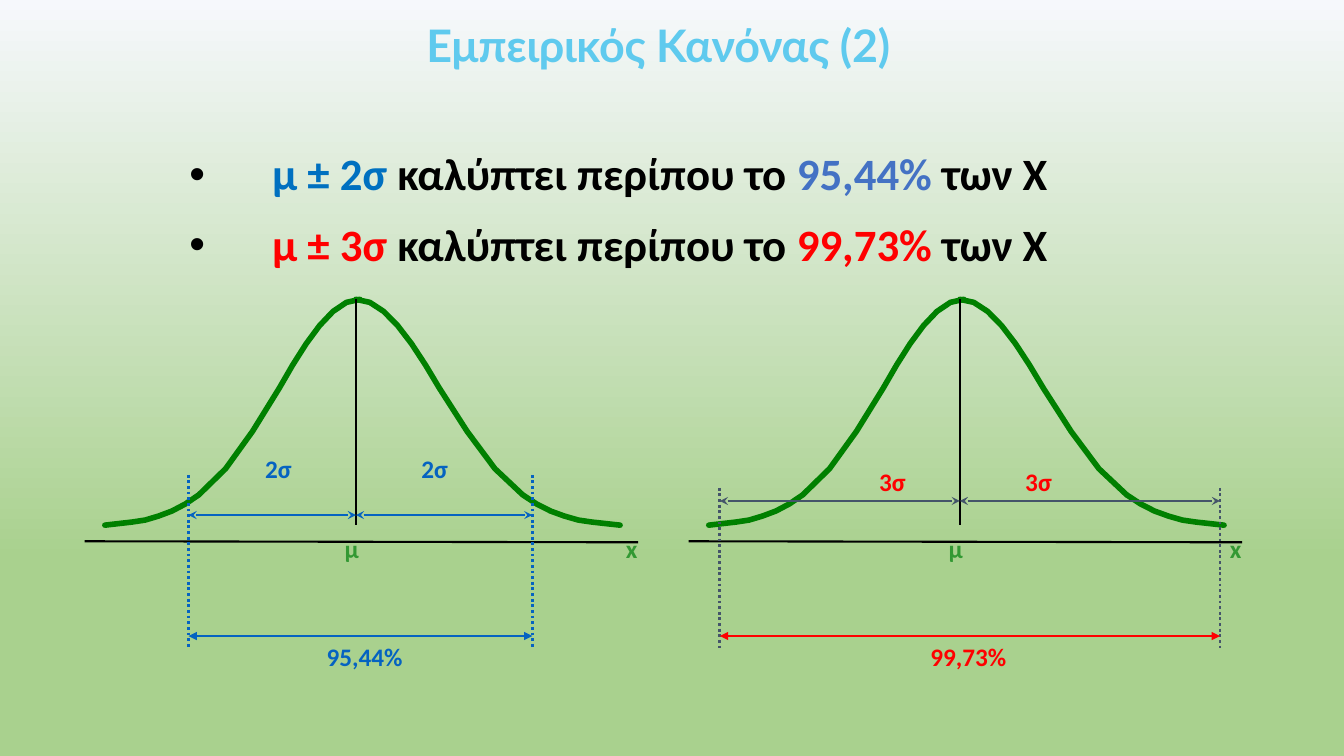
from dataclasses import dataclass
from lxml.etree import SubElement as Sub
from pptx import Presentation as Deck
from pptx.dml.color import RGBColor as Color
from pptx.enum.dml import MSO_LINE as Dash
from pptx.enum.shapes import MSO_CONNECTOR as Link
from pptx.enum.text import MSO_ANCHOR as Anchor, PP_ALIGN as Align
from pptx.oxml.ns import qn
from pptx.util import Emu, Inches, Pt

COLS, ROWS = 13.33, 7.5
WIDE, TALL = Inches(COLS), Inches(ROWS)
BLACK, RED, BLUE, SLATE = "000000", "FF0000", "0563C1", "44546A"
GREEN, LEAF = "008000", "339933"
BODY = {"name": "Calibri", "size": Pt(32), "bold": True}
HEAD = BODY | {"name": "Lato"}
NOTE = BODY | {"size": Pt(18)}
STEPS = (0, 2, 3, 4, 5, 6, 7, 9, 11, 13, 14, 15, 16, 17, 18, 19)
CURVE = (5.21, 5.18, 5.16, 5.12, 5.07, 5, 4.91, 4.65,
         4.28, 3.85, 3.62, 3.41, 3.23, 3.09, 3, 2.97)
MEAN, PITCH = 3.53, 5.99


@dataclass
class Panel:
    """One bell curve with its marked range, in columns and rows."""
    shift: float
    left: float
    right: float
    top: float
    row: float
    sigma: str
    share: str
    tint: str
    guide: str
    marks: tuple[float, float]


@dataclass
class Rule:
    """One bulleted statement of the rule."""
    range: str
    share: str
    tint: str
    accent: str


PANELS = (
    Panel(0, 1.87, 5.28, 4.71, 5.11, "2σ", "95,44%", BLUE, BLUE, (2.47, 4.02)),
    Panel(PITCH, 7.14, 12.1, 4.84, 4.97, "3σ", "99,73%", RED, SLATE, (8.56, 10.01)),
)
RULES = (
    Rule("μ ± 2σ ", "95,44% ", "0070C0", "4472C4"),
    Rule("μ ± 3σ ", "99,73% ", RED, RED),
)


def hue(code: str) -> Color:
    """Turn a hex string into a colour."""
    return Color.from_string(code)


def col(num: float) -> Emu:
    """Measure columns across the slide."""
    return Emu(round(WIDE * num / COLS))


def row(num: float) -> Emu:
    """Measure rows down the slide."""
    return Emu(round(TALL * num / ROWS))


def paint(item: object, look: dict) -> None:
    """Set each format value on an object."""
    for key, val in look.items():
        setattr(item, key, val)


def write(para: object, text: str, tint: str, look: dict) -> None:
    """Add a coloured run to a paragraph."""
    run = para.add_run()
    run.text = text
    paint(run.font, look)
    run.font.color.rgb = hue(tint)


def frame(slide: object, x: float, y: float, w: float, h: float) -> object:
    """Add a wrapping text box."""
    box = slide.shapes.add_textbox(col(x), row(y), col(w), row(h))
    box.text_frame.word_wrap = True
    return box


def label(slide: object, x: float, y: float, w: float, text: str,
          tint: str, align: Align = Align.CENTER) -> None:
    """Place a small bold label."""
    para = frame(slide, x, y, w, 0.64).text_frame.paragraphs[0]
    para.alignment = align
    write(para, text, tint, NOTE)


def line(slide: object, x1: float, y1: float, x2: float, y2: float, tint: str,
         width: float, tip: str = "", dash: Dash | None = None) -> None:
    """Draw a straight line, with optional tips and dashes."""
    link = slide.shapes.add_connector(Link.STRAIGHT, col(x1), row(y1), col(x2), row(y2))
    paint(link.line, {"width": Pt(width), "dash_style": dash})
    link.line.color.rgb = hue(tint)
    form = link.element.spPr
    if tip:
        for end in ("a:headEnd", "a:tailEnd"):
            Sub(form.find(qn("a:ln")), qn(end), type=tip)
    Sub(form, qn("a:effectLst"))


def half(slide: object, tail: float, peak: float) -> None:
    """Draw half of a bell from its tail to its peak."""
    dots = [(col(tail + (peak - tail) * step / STEPS[-1]), row(y))
            for step, y in zip(STEPS, CURVE)]
    pen = slide.shapes.build_freeform(*dots[0])
    pen.add_line_segments(dots[1:], close=False)
    bell = pen.convert_to_shape()
    bell.shadow.inherit = False
    bell.fill.background()
    bell.line.color.rgb = hue(GREEN)
    bell.line.width = Pt(4)
    edge = bell.element.spPr.find(qn("a:ln"))
    edge.set("cap", "rnd")
    Sub(edge, qn("a:round"))


def chart(slide: object, panel: Panel) -> None:
    """Draw one bell panel with its range and labels."""
    mid = MEAN + panel.shift
    half(slide, 6.15 + panel.shift, mid)
    half(slide, 1.04 + panel.shift, mid + 0.04)
    line(slide, mid, CURVE[-1], mid, CURVE[0], BLACK, 1)
    line(slide, 0.84 + panel.shift, 5.37, 6.33 + panel.shift, 5.38, BLACK, 1.5)
    label(slide, 6.11 + panel.shift, 5.24, 0.39, "x", LEAF, Align.LEFT)
    label(slide, 3.32 + panel.shift, 5.24, 0.52, "μ", LEAF, Align.LEFT)
    for x, mark in zip((panel.left, panel.right), panel.marks):
        line(slide, x, panel.top, x, 6.44, panel.guide, 2, dash=Dash.ROUND_DOT)
        line(slide, min(x, mid), panel.row, max(x, mid), panel.row, panel.guide, 1, "stealth")
        label(slide, mark, panel.top - 0.26, 0.58, panel.sigma, panel.tint)
    line(slide, panel.left, 6.31, panel.right, 6.31, panel.tint, 1.5, "triangle")
    label(slide, 3.02 + panel.shift, 6.31, 1.19, panel.share, panel.tint)


def title(slide: object) -> None:
    """Write the heading."""
    box = frame(slide, 4.23, 0.23, 4.92, 0.5)
    text = box.text_frame
    paint(text, {"margin_left": 0, "margin_right": 0, "margin_top": 0,
                 "margin_bottom": 0, "vertical_anchor": Anchor.MIDDLE})
    text.paragraphs[0].line_spacing = 0.9
    write(text.paragraphs[0], "Εμπειρικός Κανόνας (2)", "5FCAEE", HEAD)
    for prop in box.element.iter(qn("a:rPr")):
        prop.set("spc", "-20")


def bullets(slide: object) -> None:
    """Write the two bulleted statements."""
    box = frame(slide, 1.78, 1.46, 9.08, 1)
    text = box.text_frame
    for num, rule in enumerate(RULES):
        para = text.add_paragraph() if num else text.paragraphs[0]
        paint(para, {"line_spacing": 0.9, "space_after": Pt(16)})
        write(para, rule.range, rule.tint, BODY)
        write(para, "καλύπτει περίπου το ", BLACK, BODY)
        write(para, rule.share, rule.accent, BODY)
        write(para, "των X", BLACK, BODY)
    for prop in box.element.iter(qn("a:pPr")):
        prop.set("marL", str(col(0.82)))
        prop.set("indent", str(-col(0.82)))
        Sub(Sub(prop, qn("a:buClr")), qn("a:srgbClr"), val=BLACK)
        Sub(prop, qn("a:buFont"), typeface="Arial")
        Sub(prop, qn("a:buChar"), char="•")


def main() -> None:
    """Build and save the slide."""
    deck = Deck()
    paint(deck, {"slide_width": WIDE, "slide_height": TALL})
    slide = deck.slides.add_slide(deck.slide_layouts[6])
    fill = slide.background.fill
    fill.gradient()
    fill.gradient_angle = 270
    for stop, place, tint in zip(fill.gradient_stops, (0, 0.74), ("F6F8FC", "A9D18E")):
        stop.position = place
        stop.color.rgb = hue(tint)
    title(slide)
    bullets(slide)
    for panel in PANELS:
        chart(slide, panel)
    deck.save("out.pptx")


if __name__ == "__main__":
    main()
